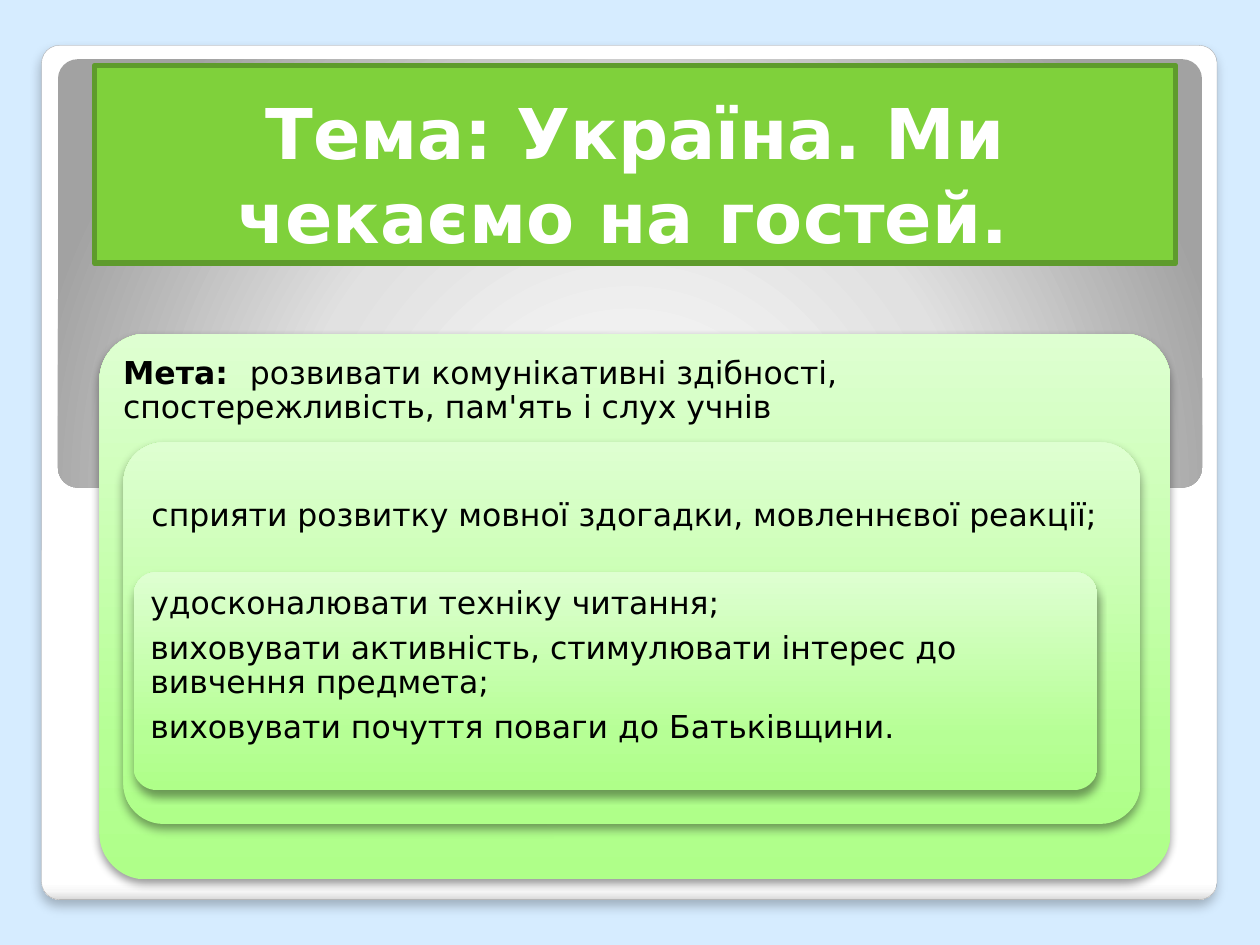
from pptx import Presentation
from pptx import util as u
from pptx.dml.color import RGBColor
from pptx.enum import shapes, text
from pptx.oxml import parse_xml
from pptx.oxml.ns import nsdecls

FONT = "DejaVu Sans"
COLORS = {
    "sky": "D6ECFF", "white": "FFFFFF", "black": "000000",
    "frame_line": "A4A4A4", "title": "7FD13B", "title_line": "5E9B2C",
}
PAPER = [(0, "FFFFFF"), (98, "FFFFFF"), (99, "F7F7F7"), (100, "DADADA")]
SILVER = [(0, "FFFFFF"), (55, "E1E1E1"), (100, "A2A2A2")]
GREEN = [(0, "AFFF89"), (25, "B6FF95"), (100, "DEFFD1")]
GLOW = ('<a:path path="circle"><a:fillToRect l="50000" t="175000" '
        'r="50000" b="-75000"/></a:path>')


def rgb(name):
    return RGBColor.from_string(COLORS[name])


def linear(degrees):
    return f'<a:lin ang="{degrees * 60000}" scaled="0"/>'


def add_panel(slide, box, radius=None):
    kind = shapes.MSO_SHAPE.RECTANGLE if radius is None else shapes.MSO_SHAPE.ROUNDED_RECTANGLE
    panel = slide.shapes.add_shape(kind, *map(u.Inches, box))
    if radius is not None:
        panel.adjustments[0] = radius
    panel.fill.background()
    panel.line.fill.background()
    panel.shadow.inherit = False
    return panel


def set_outline(panel, color, width):
    panel.line.color.rgb = rgb(color)
    panel.line.width = u.Pt(width)


def set_gradient(panel, stops, direction):
    marks = "".join(
        f'<a:gs pos="{pos * 1000}"><a:srgbClr val="{color}"/></a:gs>' for pos, color in stops)
    gradient = parse_xml(
        f'<a:gradFill {nsdecls("a")} rotWithShape="1"><a:gsLst>{marks}</a:gsLst>'
        f'{direction}</a:gradFill>')
    properties = panel.element.spPr
    properties.replace(properties.find("{*}noFill"), gradient)


def set_shadow(panel, opacity, blur, distance):
    shadow = parse_xml(
        f'<a:outerShdw {nsdecls("a")} blurRad="{u.Pt(blur)}" dist="{u.Pt(distance)}" '
        f'dir="5400000" algn="t" rotWithShape="0"><a:srgbClr val="{COLORS["black"]}">'
        f'<a:alpha val="{opacity * 1000}"/></a:srgbClr></a:outerShdw>')
    panel.element.spPr.find("{*}effectLst").append(shadow)


def write(panel, paragraphs, insets, size, color, align, anchor):
    frame = panel.text_frame
    frame.word_wrap = True
    frame.vertical_anchor = anchor
    frame.margin_left, frame.margin_top, frame.margin_right, frame.margin_bottom = map(
        u.Inches, insets)
    for index, parts in enumerate(paragraphs):
        paragraph = frame.add_paragraph() if index else frame.paragraphs[0]
        paragraph.alignment = align
        for words, bold in parts:
            run = paragraph.add_run()
            run.text = words
            run.font.name = FONT
            run.font.size = u.Pt(size)
            run.font.bold = bold
            run.font.color.rgb = rgb(color)
    return frame


def add_frame(slide):
    paper = add_panel(slide, (0.33, 0.36, 9.33, 6.78), 0.021)
    set_gradient(paper, PAPER, linear(90))
    set_outline(paper, "frame_line", 0.16)
    set_shadow(paper, 25, 6, 4)
    backdrop = add_panel(slide, (0.46, 0.47, 9.08, 3.4), 0.046)
    set_gradient(backdrop, SILVER, GLOW)


def add_title(slide, words):
    title = add_panel(slide, (0.75, 0.52, 8.58, 1.57))
    title.fill.solid()
    title.fill.fore_color.rgb = rgb("title")
    set_outline(title, "title_line", 3.35)
    write(title, [[(words, True)]], [0.05] * 4, 40, "white",
          text.PP_ALIGN.CENTER, text.MSO_ANCHOR.BOTTOM)


def add_goal(slide, box, radius, insets, paragraphs):
    goal = add_panel(slide, box, radius)
    set_gradient(goal, GREEN, linear(270))
    set_shadow(goal, 40, 5.2, 3)
    frame = write(goal, paragraphs, insets, 18, "black",
                  text.PP_ALIGN.LEFT, text.MSO_ANCHOR.TOP)
    for paragraph in frame.paragraphs:
        paragraph.line_spacing = 0.9
        paragraph.space_after = u.Pt(6.3)


def main():
    deck = Presentation()
    deck.slide_width, deck.slide_height = u.Inches(10), u.Inches(7.5)
    slide = deck.slides.add_slide(deck.slide_layouts[6])
    slide.background.fill.solid()
    slide.background.fill.fore_color.rgb = rgb("sky")

    add_frame(slide)
    add_title(slide, "Тема: Україна. Ми чекаємо на гостей. ")
    add_goal(slide, (0.79, 2.65, 8.5, 4.33), 0.085, (0.08, 0.08, 0.08, 0), [
        [("Мета:  ", True),
         ("розвивати комунікативні здібності, спостережливість, пам'ять і слух учнів", False)],
    ])
    add_goal(slide, (0.98, 3.51, 8.07, 3.03), 0.105, (0.13, 0.36, 0.05, 0), [
        [("сприяти розвитку мовної здогадки, мовленнєвої реакції;", False)],
    ])
    add_goal(slide, (1.06, 4.54, 7.65, 1.73), 0.105, (0.08, 0.07, 0.08, 0), [
        [("удосконалювати техніку читання;", False)],
        [("виховувати активність, стимулювати інтерес до вивчення предмета;", False)],
        [("виховувати почуття поваги до Батьківщини.", False)],
    ])
    deck.save("out.pptx")


if __name__ == "__main__":
    main()
